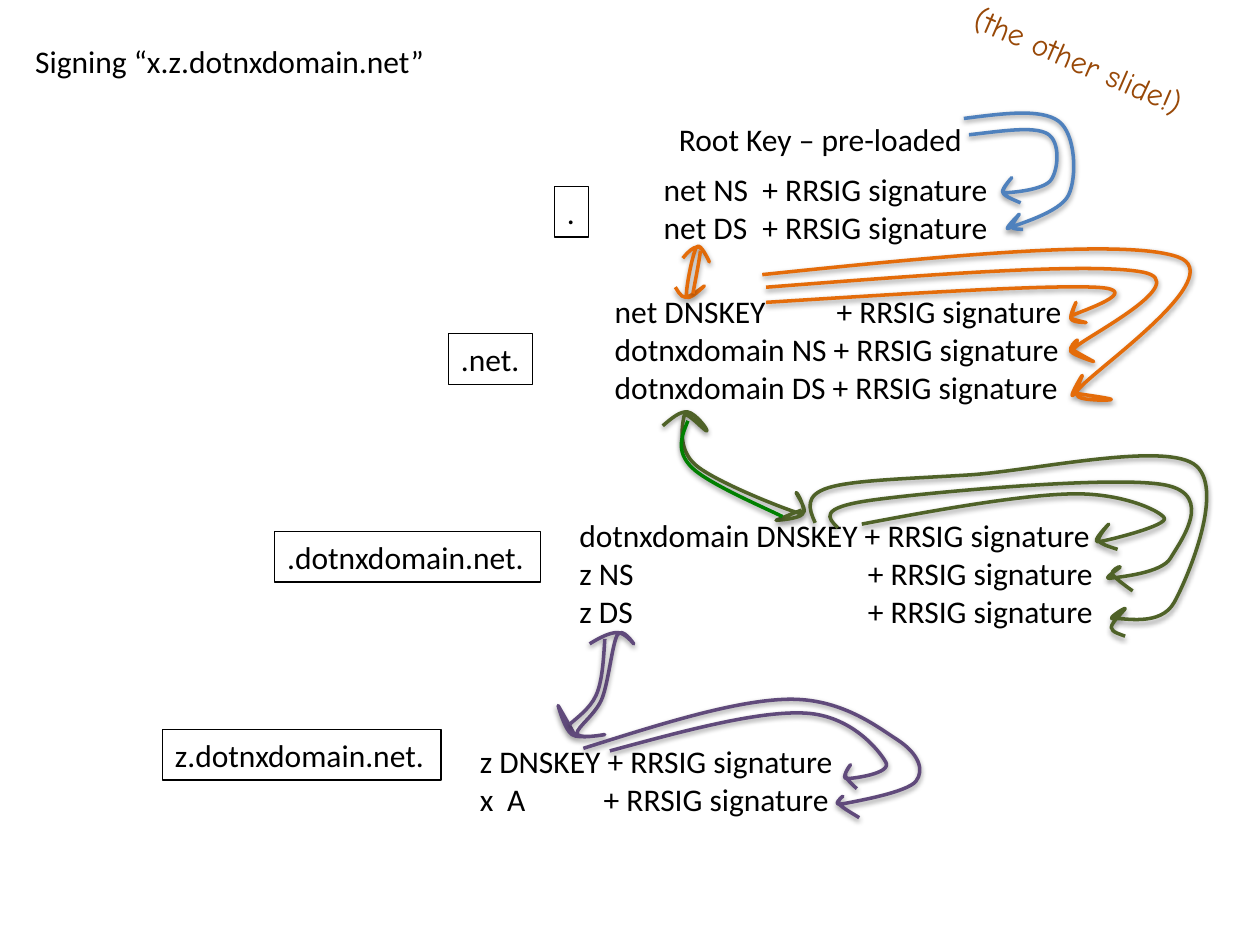
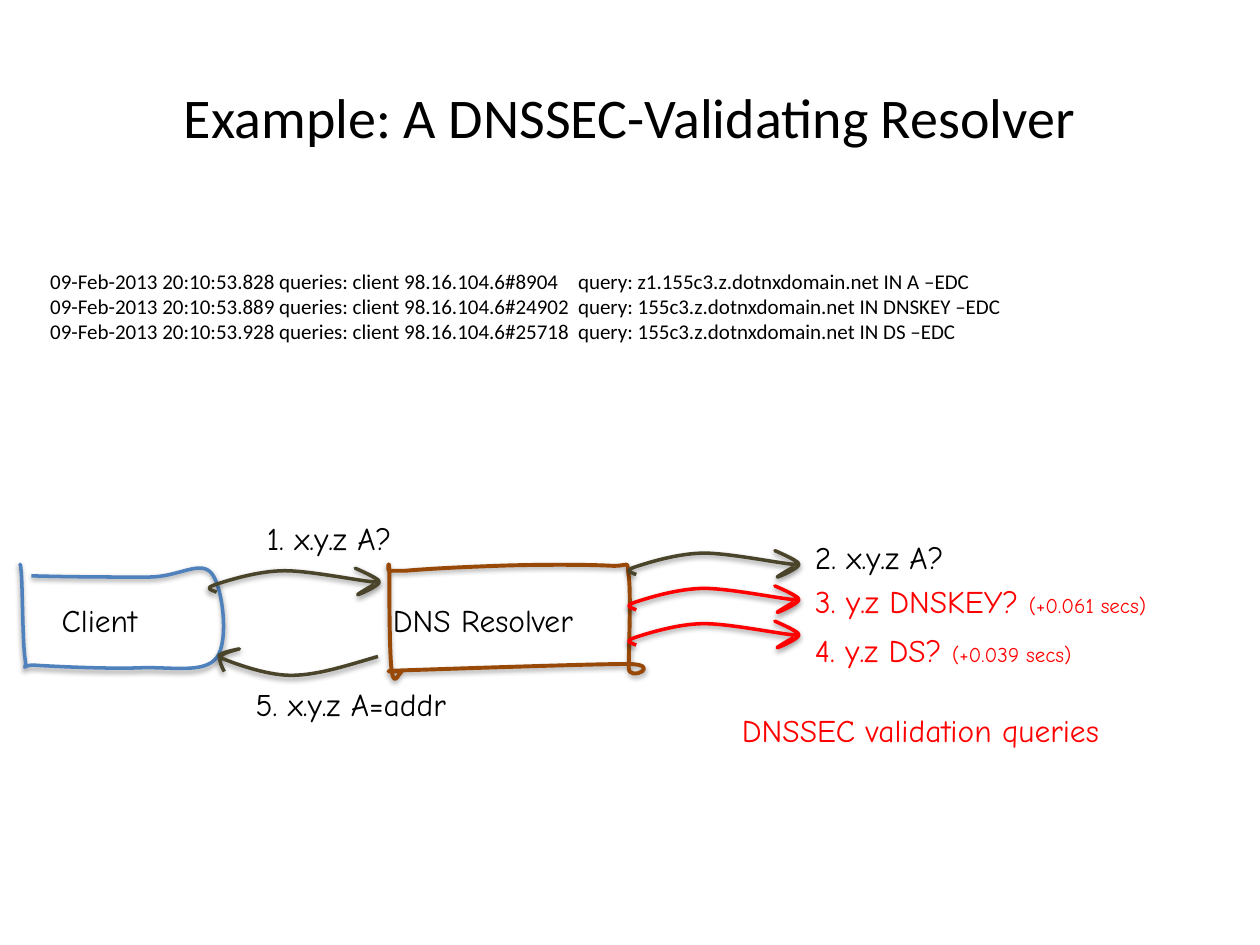
from lxml import etree
from pptx import Presentation
from pptx.dml.color import RGBColor
from pptx.enum.text import MSO_ANCHOR, MSO_AUTO_SIZE, PP_ALIGN
from pptx.oxml.ns import qn
from pptx.util import Pt

# Shared look
BODY, HAND = "Calibri", "Comic Neue"
BLACK, RED, BROWN = "000000", "FF0000", "984807"
BLUE, ORANGE, OLIVE, GREEN = "4F81BD", "E46C0A", "4F6228", "008000"
PURPLE, DARK = "604A7B", "4A452A"
GRID = Pt(0.72)  # one unit of the sketched curves
colour = RGBColor.from_string


def write(slide, left, top, width, lines, font=BODY, ink=BLACK, size=18, tabs=()):
    """Each line is a string or a list of (words, size) runs."""
    height = 7.2 + 1.2 * size * len(lines)
    box = slide.shapes.add_textbox(Pt(left), Pt(top), Pt(width), Pt(height))
    frame = box.text_frame
    frame.word_wrap = bool(tabs)
    frame.auto_size = MSO_AUTO_SIZE.SHAPE_TO_FIT_TEXT
    for number, line in enumerate(lines):
        paragraph = frame.add_paragraph() if number else frame.paragraphs[0]
        if tabs:
            stops = etree.SubElement(paragraph._p.get_or_add_pPr(), qn("a:tabLst"))
            for stop in tabs:
                etree.SubElement(stops, qn("a:tab"), pos=str(Pt(stop)), algn="l")
        for words, run_size in [(line, size)] if isinstance(line, str) else line:
            run = paragraph.add_run()
            run.text = words
            run.font.name = font
            run.font.size = Pt(run_size)
            run.font.color.rgb = colour(ink)
    return box


def sketch(slide, ink, anchors, width=2, opacity=38):
    """Draw a smooth pen stroke through the anchors."""
    left = min(x for x, y in anchors)
    top = min(y for x, y in anchors)
    builder = slide.shapes.build_freeform(*anchors[0], scale=GRID)
    builder.add_line_segments(anchors[1:], close=False)
    stroke = builder.convert_to_shape()
    stroke.fill.background()
    stroke.line.color.rgb = colour(ink)
    stroke.line.width = Pt(width)

    # Bend each segment: a handle is a sixth of the step between the neighbours
    padded = [anchors[0], *anchors, anchors[-1]]
    for i, segment in enumerate(list(stroke.element.iter(qn("a:lnTo")))):
        segment.tag = qn("a:cubicBezTo")
        before, start, end, after = [(x - left, y - top) for x, y in padded[i:i + 4]]
        leaving = [s + (e - b) / 6 for s, e, b in zip(start, end, before)]
        arriving = [e - (a - s) / 6 for e, a, s in zip(end, after, start)]
        if i == 0:
            leaving = [(s + h) / 2 for s, h in zip(start, arriving)]
        for order, (x, y) in enumerate((leaving, arriving)):
            handle = etree.Element(qn("a:pt"), x=str(round(x)), y=str(round(y)))
            segment.insert(order, handle)

    # Soft shadow straight below
    stroke.shadow.inherit = False
    effects = stroke.element.spPr.find(qn("a:effectLst"))
    shade = etree.SubElement(effects, qn("a:outerShdw"), blurRad=str(Pt(3.1)),
                             dist=str(Pt(1.6)), dir="5400000", rotWithShape="0")
    black = etree.SubElement(shade, qn("a:srgbClr"), val=BLACK)
    etree.SubElement(black, qn("a:alpha"), val=str(opacity * 1000))


deck = Presentation()
deck.slide_width, deck.slide_height = Pt(720), Pt(540)
blank = deck.slide_layouts[6]

# Slide 1: chain of signatures
chain = deck.slides.add_slide(blank)
write(chain, 13, 20.2, 330.5, ["Signing “x.z.dotnxdomain.net”"])
aside = write(chain, 544.3, 26.6, 175, ["(the other slide!)"], HAND, BROWN)
aside.rotation = 23.4

# Zone names
for zone, left, top, width in [
    (".", 316.8, 106.6, 19.4),
    (".net.", 256.3, 190.8, 48.2),
    (".dotnxdomain.net.", 157, 303.8, 151.9),
    ("z.dotnxdomain.net.", 92.9, 416.9, 159.1),
]:
    zone_label = write(chain, left, top, width, [zone])
    zone_label.line.color.rgb = colour(BLACK)
    zone_label.line.width = Pt(0.75)

# Records of each zone, with the stops their columns line up on
SIGNED = "+ RRSIG signature"
for left, top, width, records, tabs in [
    (380.9, 64.8, 178.6, ["Root Key – pre-loaded"], ()),
    (372.2, 93.6, 202.3, ["net NS\t" + SIGNED, "net DS\t" + SIGNED], (56.4,)),
    (344.2, 163.4, 275.8, ["net DNSKEY\t" + SIGNED, "dotnxdomain NS " + SIGNED,
                           "dotnxdomain DS " + SIGNED], (126.8,)),
    (324, 291.6, 314.6, ["dotnxdomain DNSKEY " + SIGNED, "z NS\t" + SIGNED,
                         "z DS\t" + SIGNED], (164.8,)),
    (267.1, 420.5, 218.9, ["z DNSKEY " + SIGNED, "x\tA\t" + SIGNED], (15.6, 70.8)),
]:
    write(chain, left, top, width, records, tabs=tabs)

# Arrows from each key to what it signs, and between zones
strokes = {
    BLUE: [
        [(769, 107), (831, 106), (834, 143), (797, 153), (803, 141), (796, 153),
         (810, 161)],
        [(765, 94), (840, 96), (848, 155), (801, 181), (809, 170), (803, 180),
         (812, 182)],
    ],
    ORANGE: [
        [(542, 205), (554, 196), (563, 208), (553, 196), (545, 235), (559, 227),
         (544, 236), (536, 228)],
        [(556, 199), (550, 233)],
        [(608, 240), (870, 228), (852, 250), (854, 240), (850, 253), (862, 256),
         (851, 253)],
        [(608, 228), (907, 216), (853, 276), (855, 270), (850, 279), (868, 287),
         (852, 278)],
        [(605, 218), (935, 204), (856, 309), (859, 298), (856, 315), (882, 317),
         (853, 312)],
    ],
    OLIVE: [
        [(526, 338), (546, 327), (561, 342), (543, 330), (552, 369), (633, 407),
         (632, 391), (637, 408), (616, 413), (636, 405)],
        [(684, 416), (850, 392), (924, 411), (872, 430), (880, 416), (872, 429),
         (887, 436)],
        [(665, 419), (692, 397), (925, 385), (929, 443), (881, 459), (889, 450),
         (883, 456), (899, 469)],
        [(647, 415), (658, 387), (769, 377), (947, 368), (932, 478), (884, 491),
         (893, 483), (882, 498), (893, 505)],
    ],
    GREEN: [[(546, 334), (549, 371), (621, 410)]],
    PURPLE: [
        [(468, 511), (490, 502), (503, 511), (490, 504), (478, 554), (458, 582),
         (480, 583), (454, 583), (443, 560), (456, 583)],
        [(480, 507), (473, 552), (452, 575)],
        [(484, 596), (639, 566), (703, 605), (672, 618), (675, 607), (671, 616),
         (680, 626)],
        [(463, 594), (625, 555), (712, 587), (727, 620), (669, 638), (669, 632),
         (666, 638), (682, 649)],
    ],
}
for ink, curves in strokes.items():
    for curve in curves:
        sketch(chain, ink, curve)

# Slide 2: validating resolver
resolver = deck.slides.add_slide(blank)
title = write(resolver, 36, 21.6, 648,
              ["Example: A DNSSEC-Validating Resolver"], size=32)
title.height = Pt(90)
title.text_frame.auto_size = MSO_AUTO_SIZE.NONE
title.text_frame.word_wrap = True
title.text_frame.vertical_anchor = MSO_ANCHOR.MIDDLE
title.text_frame.paragraphs[0].alignment = PP_ALIGN.CENTER

# Query log
log = [
    f"09-Feb-2013 20:10:53.{moment} queries: client 98.16.104.6#{port}\t"
    f"query: {name}.z.dotnxdomain.net IN {kind} –EDC"
    for moment, port, name, kind in [
        (828, 8904, "z1.155c3", "A"),
        (889, 24902, "155c3", "DNSKEY"),
        (928, 25718, "155c3", "DS"),
    ]
]
write(resolver, 21.6, 149.8, 582.5, log, size=12, tabs=(301.6,))

# Client and resolver outlines
sketch(resolver, BLUE, [(25, 457), (118, 458), (168, 455), (172, 522), (111, 530),
                        (29, 528), (20, 523), (17, 455), (16, 449)])
sketch(resolver, BROWN, [(322, 453), (397, 449), (484, 449), (499, 457), (499, 530),
                         (498, 527), (322, 532), (319, 533), (311, 533), (309, 454),
                         (309, 453), (322, 453)], width=2.25, opacity=35)

# Query arrows: one curve, moved
query = [(172, 470), (171, 464), (226, 453), (299, 462), (282, 451), (301, 462),
         (284, 472), (297, 464)]
for ink, right, down in [(DARK, 0, 0), (DARK, 333, -14), (RED, 333, 14), (RED, 333, 42)]:
    sketch(resolver, ink, [(x + right, y + down) for x, y in query])

# Answer arrow
sketch(resolver, DARK, [(300, 521), (231, 536), (175, 522), (190, 515), (175, 521),
                        (178, 533)])

# Handwritten labels
for ink, left, top, width, line in [
    (BLACK, 28.1, 339.8, 73.4, "Client"),
    (BLACK, 217.4, 339.8, 149, "DNS Resolver"),
    (BLACK, 145.4, 293, 105.1, "1. x.y.z A?"),
    (BLACK, 458.6, 303.8, 112.3, "2. x.y.z A?"),
    (RED, 458.6, 329, 259.9, [("3. y.z DNSKEY? ", 18), ("(+0.061 secs)", 12)]),
    (RED, 458.6, 357.1, 202.3, [("4. y.z DS? ", 18), ("(+0.039 secs)", 12)]),
    (BLACK, 139, 388.1, 152.6, "5. x.y.z A=addr"),
    (RED, 416.9, 402.5, 280.1, "DNSSEC validation queries"),
]:
    write(resolver, left, top, width, [line], HAND, ink)

deck.save("out.pptx")
